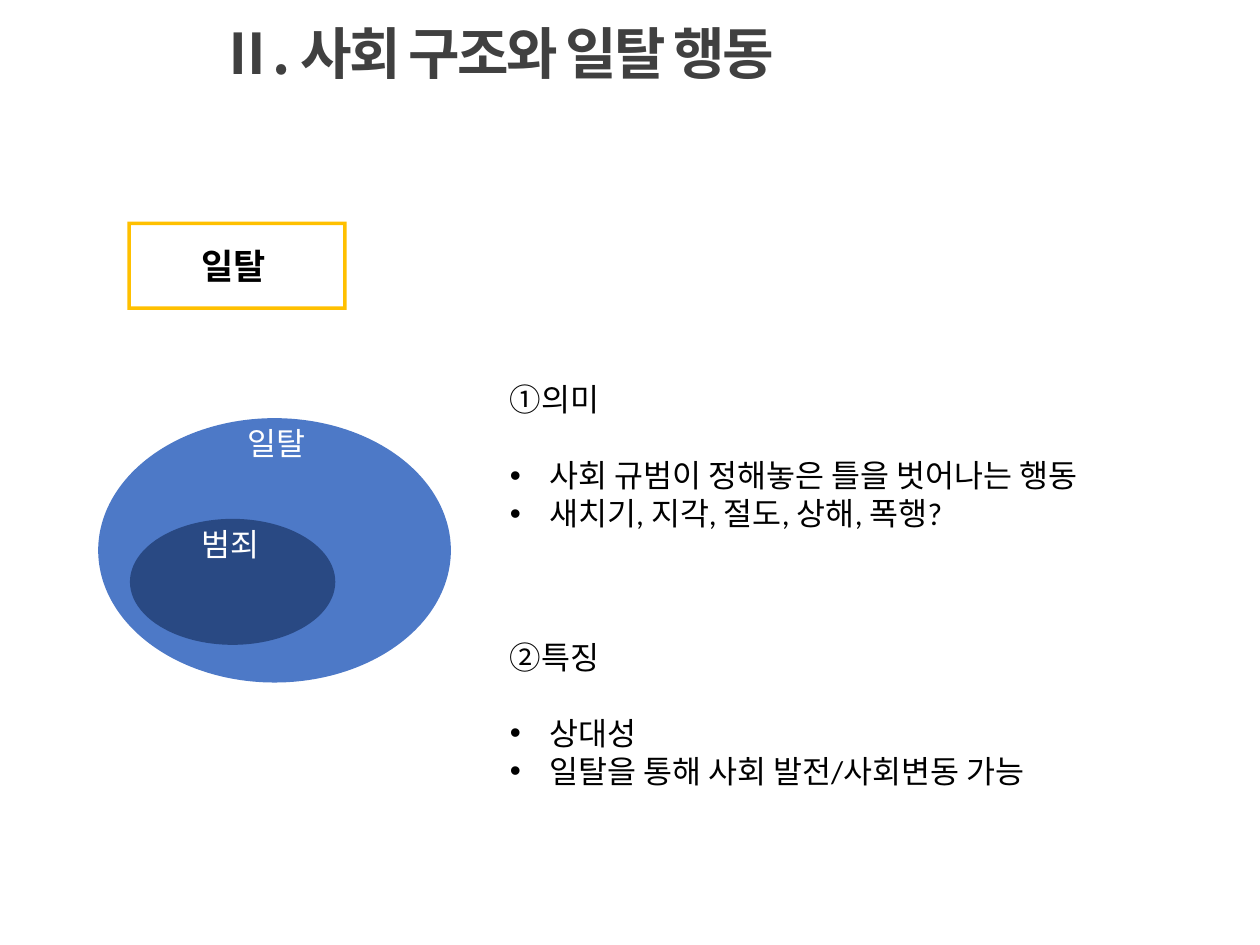
"""Build the slide on social structure and deviant behaviour."""
from lxml.etree import SubElement
from pptx import Presentation
from pptx.dml.color import RGBColor
from pptx.enum.shapes import MSO_SHAPE as Shape
from pptx.enum.text import MSO_ANCHOR as Anchor, PP_ALIGN as Align
from pptx.oxml.ns import qn
from pptx.util import Cm, Pt

COLORS = {"title": "404040", "ink": "000000", "white": "FFFFFF",
          "gold": "FFC000", "deviance": "4D79C7", "crime": "294983"}
KOREAN = "Noto Sans CJK KR"
FORMATS = {
    "title": {"size": Pt(32), "name": KOREAN, "bold": True},
    "topic": {"size": Pt(20), "name": KOREAN, "bold": True},
    "body": {"size": Pt(18), "name": "Calibri"},
}
TITLE = ("Ⅱ. 사회 구조와 일탈 행동", (4.17, -0.03, 20.37, 2.16))
TOPIC = ("일탈", (2.57, 4.8, 4.27, 1.12))
TOPIC_FRAME = (2.57, 4.47, 4.42, 1.78)
SETS = [
    ("일탈", "deviance", (1.98, 8.43, 7.11, 5.33), (4.75, 8.43, 2.49, 1.02)),
    ("범죄", "crime", (2.62, 10.46, 4.14, 2.54), (3.81, 10.46, 2.46, 1.02)),
]
SECTIONS = [
    ("①의미", ["사회 규범이 정해놓은 틀을 벗어나는 행동",
             "새치기, 지각, 절도, 상해, 폭행?"], (10.03, 7.54, 15.67, 4.11)),
    ("②특징", ["상대성", "일탈을 통해 사회 발전/사회변동 가능"],
     (10.03, 12.73, 15.11, 4.11)),
]
INDENT = Cm(0.79)
LINE_GAP = Pt(22)


def rgb(color):
    return RGBColor.from_string(COLORS[color])


def add_solid(slide, preset, place, color):
    solid = slide.shapes.add_shape(preset, *map(Cm, place))
    solid.shadow.inherit = False
    solid.fill.solid()
    solid.fill.fore_color.rgb = rgb(color)
    solid.line.fill.background()
    return solid


def add_frame(slide, place):
    frame = slide.shapes.add_textbox(*map(Cm, place)).text_frame
    frame.word_wrap = True
    return frame


def write(paragraph, words, style, color):
    run = paragraph.add_run()
    run.text = words
    for key, value in FORMATS[style].items():
        setattr(run.font, key, value)
    run.font.color.rgb = rgb(color)
    properties = run._r.get_or_add_rPr()
    if run.font.name == KOREAN:
        SubElement(properties, qn("a:ea")).set("typeface", KOREAN)
    return properties


def add_bullet(frame, words):
    paragraph = frame.add_paragraph()
    properties = paragraph._p.get_or_add_pPr()
    properties.set("marL", str(INDENT))
    properties.set("indent", str(-INDENT))
    SubElement(properties, qn("a:buFont")).set("typeface", "Arial")
    SubElement(properties, qn("a:buChar")).set("char", "•")
    write(paragraph, words, "body", "ink")
    return paragraph


def main():
    deck = Presentation()
    deck.slide_width, deck.slide_height = Cm(25.4), Cm(19.05)
    slide = deck.slides.add_slide(deck.slide_layouts[6])

    heading, place = TITLE
    title = add_frame(slide, place)
    title.vertical_anchor = Anchor.MIDDLE
    write(title.paragraphs[0], heading, "title", "title").set("spc", "-150")

    name, place = TOPIC
    topic = add_frame(slide, place).paragraphs[0]
    topic.alignment = Align.CENTER
    write(topic, name, "topic", "ink")
    border = add_solid(slide, Shape.FRAME, TOPIC_FRAME, "gold")
    border.adjustments[0] = 0.04

    for name, color, oval, label in SETS:
        add_solid(slide, Shape.OVAL, oval, color)
        write(add_frame(slide, label).paragraphs[0], name, "body", "white")

    for heading, points, place in SECTIONS:
        section = add_frame(slide, place)
        write(section.paragraphs[0], heading, "body", "ink")
        bullets = [add_bullet(section, point) for point in points]
        bullets[0].space_before = LINE_GAP

    deck.save("out.pptx")


if __name__ == "__main__":
    main()
